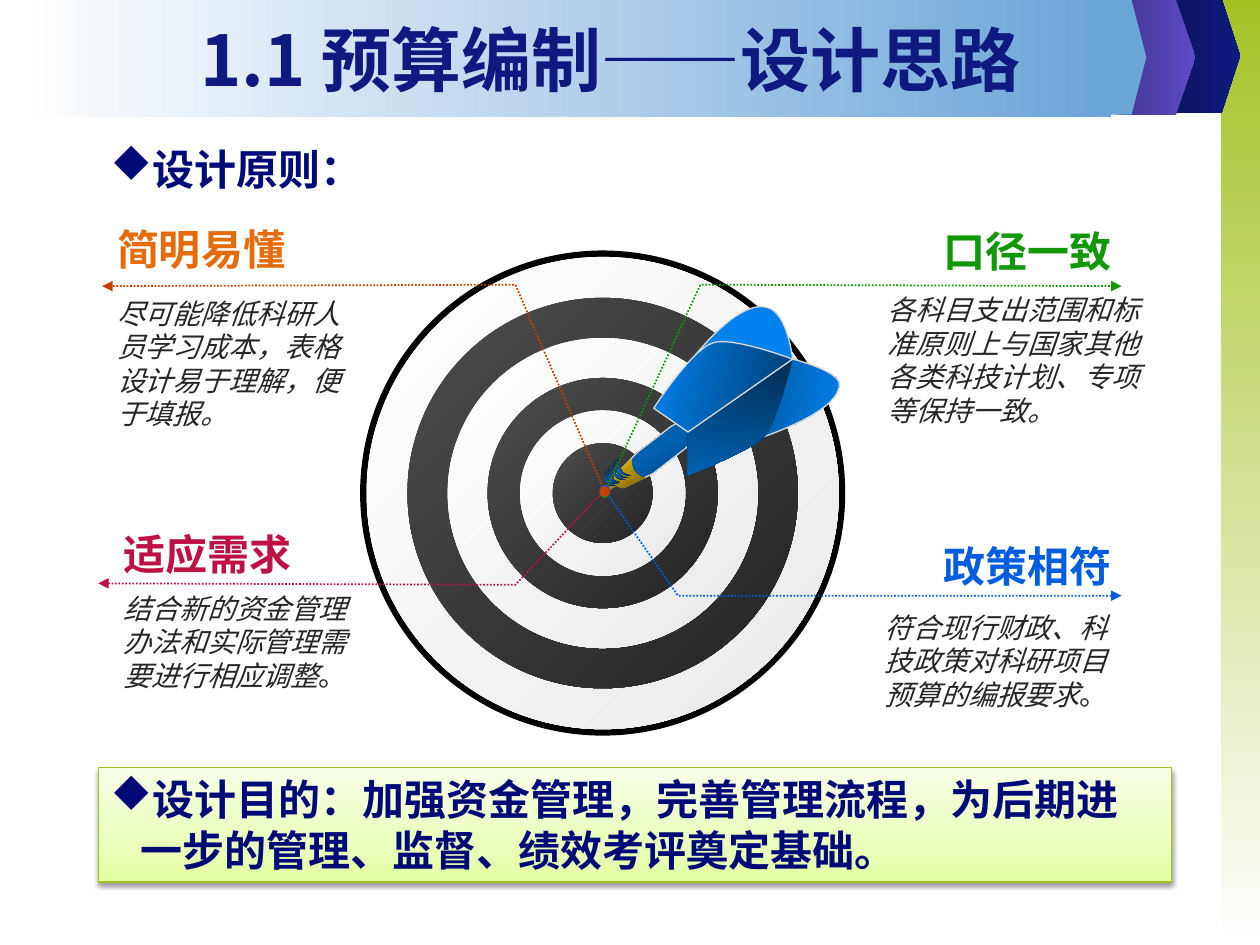
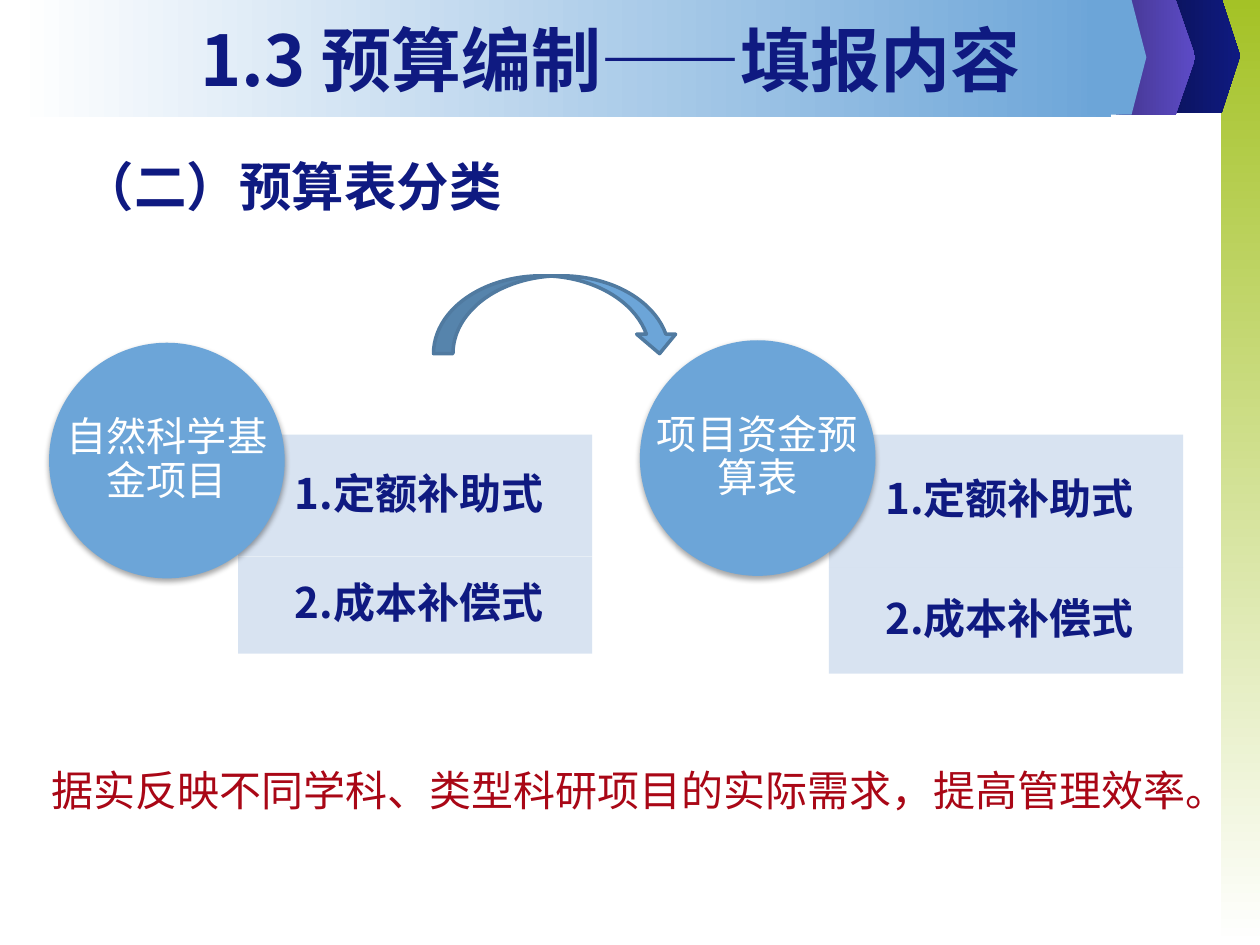
import dataclasses

import lxml.etree
import pptx
import pptx.dml.color
import pptx.enum.dml
import pptx.enum.shapes
import pptx.enum.text
import pptx.oxml.ns
import pptx.util

Cm, Pt = pptx.util.Cm, pptx.util.Pt
qn = pptx.oxml.ns.qn
KIND = pptx.enum.shapes.MSO_SHAPE


def blend(angle, *stops):
    """A gradient: its angle and evenly spaced or (place, colour) stops."""
    if isinstance(stops[0], str):
        last = len(stops) - 1
        stops = [(100 * i // last, tone) for i, tone in enumerate(stops)]
    return angle, stops


@dataclasses.dataclass(frozen=True)
class Theme:
    font: str = "Noto Sans CJK SC"
    navy: str = "0F1A81"
    blue: str = "6CA5D8"
    pale: str = "D4E1F0"
    edge: str = "507AA0"
    red: str = "A90716"
    gray: str = "262626"
    white: str = "FFFFFF"
    rim: str = "DBDBDB"
    frame: str = "A3C221"
    ink: tuple = blend(90, (0, "00053C"), (43, "000B78"), (48, "000A70"), (100, "00053C"))
    lime: tuple = blend(270, (0, "E3FFA2"), (35, "EAFFBD"), (100, "F7FFE6"))
    light: tuple = blend(45, "FFFFFF", "EAEAEA")
    dark: tuple = blend(45, "4D4D4D", "242424")
    steel: tuple = blend(56.6, "002D52", "0061B2", "002D52")
    title: int = 40
    head: int = 30
    body: int = 24
    disc: int = 23
    note: int = 16
    tight: float = 0.9


T = Theme()

# Content: shared bands (kind, box, fill), back to front
BANDS = [
    (KIND.RECTANGLE, (24.61, 0, 0.79, 19.05), blend(90, "A4C226", T.white)),
    (KIND.PENTAGON, (23.5, -0.03, 1.5, 2.31), blend(0, "0B135C", T.navy)),
    (KIND.PENTAGON, (22.5, 0, 1.6, 2.31), blend(0, "43368E", "5D4BC7")),
    (KIND.RECTANGLE, (0.3, 0, 22.1, 2.36), blend(0, T.white, T.blue)),
    (KIND.PENTAGON, (21.92, 0, 1.19, 2.31), T.blue),
]

# Content: first slide
IDEA = "1.1 预算编制——设计思路"
RULE = "设计原则："
GOAL = "设计目的：加强资金管理，完善管理流程，为后期进一步的管理、监督、绩效考评奠定基础。"

# label, its place, text colour, note runs (text, italic), note box
POINTS = [
    ("简明易懂", (2.11, 4.37), "E46C0A",
     [("尽可能降低科研人员学习成本，表格设计易于理解，便于填报。", True)],
     (2.11, 5.84, 5.11, 7.09)),
    ("口径一致", (18.77, 4.42), "119707",
     [("各科目支出范围和标准原则上与国家其他各类科技计划、专项等保持一致。", True)],
     (17.65, 5.77, 5.94, 3)),
    ("适应需求", (2.24, 10.52), "BE1247",
     [("结合新的资金管理办法和实际管理需要进行相应调整", True), ("。", False)],
     (2.24, 11.79, 5.33, 2.31)),
    ("政策相符", (18.77, 10.77), "005DDF",
     [("符合现行财政、科技政策对科研项目预算的编报要求", True), ("。", False)],
     (17.58, 12.17, 5.21, 2.31)),
]
LEADS = [
    ("119707", [(12.19, 9.93), (14.12, 5.74), (22.61, 5.77)]),
    ("BE1348", [(12.19, 9.88), (10.39, 11.79), (1.98, 11.76)]),
    ("005DDF", [(12.19, 9.88), (13.67, 12.01), (22.61, 12.01)]),
    ("C73E01", [(12.19, 9.91), (10.39, 5.74), (2.06, 5.77)]),
]
HUB = (12.15, 9.94)
RINGS = [(9.78, "000000"), (9.52, T.light), (7.87, T.dark), (6.25, T.light),
         (4.64, T.dark), (3.33, T.light), (2.01, T.dark)]

# Dart outlines: two numbers make a line, six a curve
PEAK, ROOT = (15.98, 7.24), (13.87, 8.71)
DART = [
    (blend(56.6, "DBB721", "65550F"), None,
     [(12.14, 9.96), (12.52, 9.73), (12.55, 9.7), (12.52, 9.63), (12.5, 9.65), (12.12, 9.96)]),
    (T.steel, T.rim,
     [(12.85, 9.12), (13.51, 8.61), (14.78, 7.85), (14.78, 7.85, 14.96, 7.65, 14.73, 8.1),
      (13.82, 9.04), (13.16, 9.55), (12.57, 9.83), (12.57, 9.83, 12.34, 9.83, 12.4, 9.58)]),
    (blend(56.6, "F7C800", "725D00"), None,
     [(12.73, 9.25), (12.73, 9.25, 12.7, 9.35, 12.78, 9.5), (12.9, 9.65, 13, 9.63, 13, 9.63),
      (12.57, 9.83), (12.57, 9.83, 12.32, 9.83, 12.4, 9.58)]),
    (blend(11.6, "003C6E", "0082EE"), T.rim,
     [PEAK, (*PEAK, 16.92, 7.47, 16.92, 7.75), (16.92, 8.51, 14.2, 9.17, 14.2, 9.17), ROOT]),
    ("0082EE", T.rim,
     [(15.47, 6.2), (15.88, 6.3, *PEAK, *PEAK), ROOT, (13.56, 7.77),
      (13.56, 7.77, 14.73, 5.99, 15.47, 6.2)]),
    (blend(101.6, "002D52", "0061B2"), None,
     [PEAK, (*PEAK, 15.67, 8.48, 15.42, 8.79), (15.11, 9.12, 13.87, 9.58, 13.87, 9.58), ROOT]),
    (blend(11.6, "0082EE", "003C6E"), T.rim,
     [PEAK, (*PEAK, 14.76, 6.78, 14.38, 6.91), (13.94, 7.04, 13.18, 8.23, 13.18, 8.23), ROOT]),
]
THREAD = [(0, 0), (-0.03, 0.1, 0, 0.2, 0.05, 0.25), (0.1, 0.33, 0.18, 0.36, 0.25, 0.36),
          (0.18, 0.38, 0.08, 0.36, 0.03, 0.28), (-0.03, 0.2, -0.03, 0.1, 0, 0)]
# left, top and scale of each thread
WRAPS = [(12.42, 9.27, 1), (12.47, 9.22, 1), (12.37, 9.32, 0.95),
         (12.27, 9.45, 0.82), (12.29, 9.42, 0.82), (12.22, 9.5, 0.8)]

# Content: second slide
FORM = "1.3 预算编制——填报内容"
SORT = "（二）预算表分类"
ROWS = ["1.定额补助式", "2.成本补偿式"]
# disc text, left of rows, row heights, top of disc
GROUPS = [("自然科学基金项目", 4.8, (2.46, 1.96), 6.91),
          ("项目资金预算表", 16.71, (2.69, 2.13), 6.86)]
ROW_TOP, ROW_WIDE, ROW_PAD, DISC, SHIFT = 8.76, 7.14, 1.14, 4.75, 3.81
CLOSE = "据实反映不同学科、类型科研项目的实际需求，提高管理效率。"


# Paint and outline
def rgb(tone):
    return pptx.dml.color.RGBColor.from_string(tone)


def add(node, tag, **attrs):
    return lxml.etree.SubElement(node, qn(tag), {k: str(v) for k, v in attrs.items()})


def paint(fill, node, look):
    if look is None:
        fill.background()
    elif isinstance(look, str):
        fill.solid()
        fill.fore_color.rgb = rgb(look)
    else:
        angle, stops = look
        fill.gradient()
        grad = node.find(".//" + qn("a:gradFill"))
        for child in list(grad):
            grad.remove(child)
        chain = add(grad, "a:gsLst")
        for place, tone in stops:
            add(add(chain, "a:gs", pos=place * 1000), "a:srgbClr", val=tone)
        add(grad, "a:lin", ang=round(angle * 60000), scaled=0)


def finish(shape, look, edge=None, width=0.75):
    shape.shadow.inherit = False
    paint(shape.fill, shape.element, look)
    if edge:
        shape.line.color.rgb = rgb(edge)
        shape.line.width = Pt(width)
    else:
        shape.line.fill.background()
    return shape


def draw(slide, kind, box, look, edge=None, width=0.75):
    shape = slide.shapes.add_shape(kind, *map(Cm, box))
    return finish(shape, look, edge, width)


def shade(shape, alpha, dist):
    soft = shape.element.find(".//" + qn("a:effectLst"))
    cast = add(soft, "a:outerShdw", blurRad=Pt(3.1), dist=Pt(dist), dir=5400000, rotWithShape=0)
    add(add(cast, "a:srgbClr", val="000000"), "a:alpha", val=alpha * 1000)


def trace(slide, path, close=True):
    dots = [(Cm(x), Cm(y)) for step in path for x, y in zip(step[::2], step[1::2])]
    pen = slide.shapes.build_freeform(*dots[0], scale=1.0)
    pen.add_line_segments(dots[1:], close=close)
    shape = pen.convert_to_shape()
    # Join each three lines that stand for a curve
    lines = iter(shape.element.findall(".//" + qn("a:lnTo")))
    for step in path[1:]:
        first = next(lines)
        if len(step) == 6:
            first.tag = qn("a:cubicBezTo")
            for line in (next(lines), next(lines)):
                first.append(line[0])
                line.getparent().remove(line)
    return shape


# Text
def write(shape, runs, size, look, bold=False, lead=None, align="LEFT",
          anchor="TOP", wrap=True, mark=False, pads=(0.25, 0.13, 0.25, 0.13)):
    frame = shape.text_frame
    frame.word_wrap = wrap
    frame.auto_size = pptx.enum.text.MSO_AUTO_SIZE.NONE
    frame.vertical_anchor = getattr(pptx.enum.text.MSO_ANCHOR, anchor)
    (frame.margin_left, frame.margin_top,
     frame.margin_right, frame.margin_bottom) = map(Cm, pads)
    para = frame.paragraphs[0]
    para.alignment = getattr(pptx.enum.text.PP_ALIGN, align)
    para.line_spacing = lead
    if mark:
        # "u" is the diamond in the Wingdings set
        props = para._p.get_or_add_pPr()
        props.set("marL", str(Cm(0.6)))
        props.set("indent", str(Cm(-0.6)))
        add(props, "a:buFont", typeface="Wingdings", charset=2)
        add(props, "a:buChar", char="u")
    for words, slant in runs:
        run = para.add_run()
        run.text = words
        font = run.font
        font.name, font.size, font.bold, font.italic = T.font, Pt(size), bold, slant
        props = run._r.get_or_add_rPr()
        paint(font.fill, props, look)
        add(props, "a:ea", typeface=T.font)


def label(slide, box, runs, size, look, **style):
    if isinstance(runs, str):
        runs = [(runs, False)]
    write(slide.shapes.add_textbox(*map(Cm, box)), runs, size, look, **style)


# Slides
def start(deck, words):
    slide = deck.slides.add_slide(deck.slide_layouts[5])
    title = slide.shapes.title
    title.left, title.top, title.width, title.height = map(Cm, (1.7, 0.33, 21.21, 1.7))
    write(title, [(words, False)], T.title, T.navy, bold=True, align="CENTER", anchor="MIDDLE")
    return slide


def share(slide):
    """Place the bands on the layout, behind its placeholders."""
    tree = slide.slide_layout.shapes.element
    for i, (kind, box, look) in enumerate(BANDS):
        band = draw(slide, kind, box, look)
        if kind == KIND.PENTAGON:
            band.adjustments[0] = 0.25
        tree.insert(2 + i, band.element)


def ideas(slide):
    # Target and dart
    for size, look in RINGS:
        draw(slide, KIND.OVAL, (HUB[0] - size / 2, HUB[1] - size / 2, size, size), look)
    for look, edge, path in DART:
        finish(trace(slide, path), look, edge)
    for left, top, scale in WRAPS:
        path = [tuple((left, top)[i % 2] + v * scale for i, v in enumerate(step))
                for step in THREAD]
        finish(trace(slide, path), T.steel)
    # Leader lines
    for tone, path in LEADS:
        lead = finish(trace(slide, path, close=False), None, tone, 1)
        lead.line.dash_style = pptx.enum.dml.MSO_LINE.ROUND_DOT
        line = lead.element.find(".//" + qn("a:ln"))
        add(line, "a:headEnd", type="oval")
        add(line, "a:tailEnd", type="triangle")
    # Four points
    for name, place, tone, runs, box in POINTS:
        label(slide, (*place, 3.96, 1.3), name, T.body, tone, bold=True, wrap=False)
        label(slide, box, runs, T.note, T.gray)
    # Rule and goal
    panel = draw(slide, KIND.RECTANGLE, (1.98, 15.47, 21.64, 2.31), T.lime, T.frame)
    shade(panel, 38, 1.6)
    write(panel, [(GOAL, False)], T.body, T.ink, bold=True, mark=True)
    label(slide, (1.98, 2.77, 6.76, 1.27), RULE, T.body, T.ink, bold=True, mark=True)


def forms(slide):
    label(slide, (1.4, 2.97, 10.92, 2.39), SORT, T.head, T.navy, bold=True)
    for name, left, sizes, disc_top in GROUPS:
        top = ROW_TOP
        for words, tall in zip(ROWS, sizes):
            row = draw(slide, KIND.RECTANGLE, (left, top, ROW_WIDE, tall), T.pale)
            tone = row.element.find(".//" + qn("a:srgbClr"))
            add(tone, "a:alpha", val=90000)
            label(slide, (left + ROW_PAD, top, ROW_WIDE - ROW_PAD, tall), words, T.body,
                  T.navy, bold=True, lead=T.tight, anchor="MIDDLE", pads=(0, 0.48, 0.48, 0.48))
            top += tall
        box = (left - SHIFT, disc_top, DISC, DISC)
        shade(draw(slide, KIND.OVAL, box, T.blue), 35, 1.8)
        label(slide, box, name, T.disc, T.white, lead=T.tight, align="CENTER",
              anchor="MIDDLE", pads=(0, 0, 0, 0))
    draw(slide, KIND.CURVED_DOWN_ARROW, (8.74, 5.56, 4.95, 1.57), T.blue, T.edge, 2)
    label(slide, (0.79, 15.29, 24.61, 1.27), CLOSE, T.body, T.red)


def main():
    deck = pptx.Presentation()
    deck.slide_width, deck.slide_height = Cm(25.4), Cm(19.05)
    first = start(deck, IDEA)
    share(first)
    ideas(first)
    forms(start(deck, FORM))
    deck.save("out.pptx")


if __name__ == "__main__":
    main()
